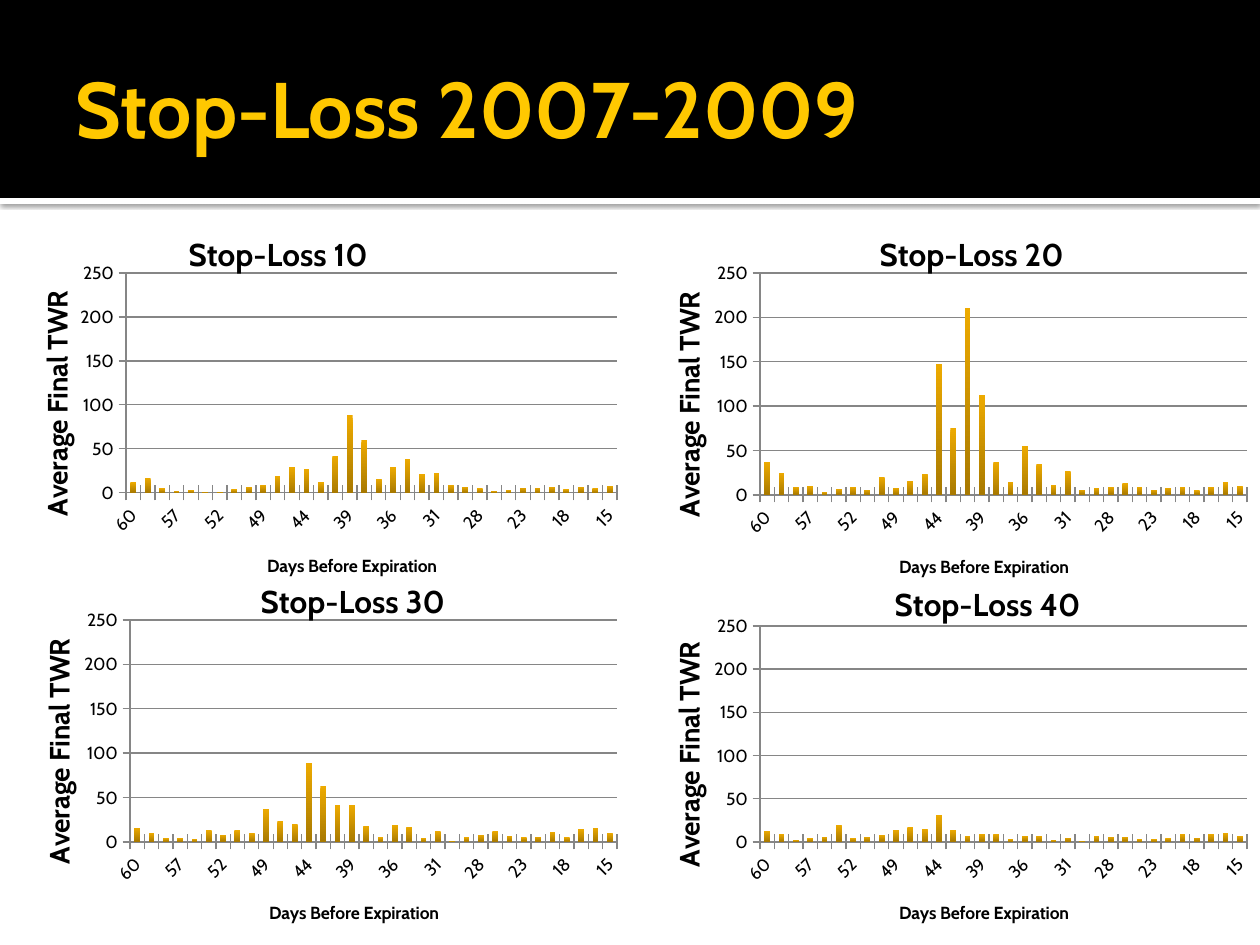
from dataclasses import dataclass

from pptx import Presentation
from pptx.chart.data import CategoryChartData
from pptx.dml.color import RGBColor
from pptx.enum.chart import XL_CHART_TYPE, XL_TICK_MARK
from pptx.enum.shapes import MSO_SHAPE
from pptx.enum.text import MSO_ANCHOR
from pptx.oxml import parse_xml
from pptx.oxml.ns import nsdecls, qn
from pptx.util import Emu, Pt

FONT = "Cabin"
BLACK, WHITE, YELLOW, GRAY = "000000", "FFFFFF", "FFC800", "868686"
BAR_TOP, BAR_BOTTOM = "EDAA00", "A87900"
CHART_W, CHART_H = 630, 410
DAYS = [60, 59, 58, 57, 56, 53, 52, 51, 50, 49, 46, 45, 44, 43, 42, 39, 38,
        37, 36, 35, 32, 31, 30, 29, 28, 25, 24, 23, 22, 21, 18, 17, 16, 15]


@dataclass
class Box:
    x: int
    y: int
    w: int
    h: int


@dataclass
class Panel:
    limit: int
    x: int
    y: int
    plot: Box
    title_at: tuple[int, int]
    y_title_at: tuple[int, int]
    x_title_at: tuple[int, int]
    values: list[int]


PANELS = [
    Panel(10, 0, 189, Box(126, 84, 491, 220), (183, 38), (33, 97), (264, 361),
          [12, 17, 5, 2, 3, 1, 1, 4, 7, 9, 19, 29, 27, 12, 42, 88, 60,
           16, 29, 38, 21, 22, 9, 7, 5, 2, 3, 6, 6, 7, 4, 7, 5, 8]),
    Panel(20, 630, 189, Box(130, 84, 487, 222), (244, 38), (35, 98), (266, 362),
          [37, 25, 9, 10, 3, 7, 9, 6, 20, 8, 16, 24, 147, 75, 211, 113, 37,
           15, 55, 35, 11, 27, 6, 8, 9, 13, 9, 6, 8, 9, 5, 9, 14, 10]),
    Panel(30, 0, 536, Box(130, 84, 487, 222), (255, 38), (35, 98), (266, 361),
          [16, 10, 4, 4, 3, 13, 8, 13, 10, 37, 23, 20, 89, 63, 41, 42, 18,
           5, 19, 17, 4, 12, 1, 5, 8, 12, 7, 5, 6, 11, 5, 14, 16, 10]),
    Panel(40, 630, 536, Box(130, 90, 487, 216), (259, 41), (35, 101), (266, 361),
          [13, 9, 2, 4, 6, 20, 4, 6, 8, 14, 17, 15, 31, 14, 7, 9, 9,
           3, 7, 7, 2, 5, 1, 7, 6, 6, 3, 3, 4, 9, 5, 9, 10, 7]),
]


def px(n: int) -> Emu:
    return Emu(round(n * 914400 / 126))


def rgb(color: str) -> RGBColor:
    return RGBColor.from_string(color)


def add_rect(slide, box: Box, color: str):
    s = slide.shapes.add_shape(MSO_SHAPE.RECTANGLE, px(box.x), px(box.y), px(box.w), px(box.h))
    s.shadow.inherit = False
    s.fill.solid()
    s.fill.fore_color.rgb = rgb(color)
    s.line.fill.background()
    return s


def add_shadow(s) -> None:
    effects = s._element.spPr.find(qn("a:effectLst"))
    effects.append(parse_xml(
        f'<a:outerShdw {nsdecls("a")} blurRad="{Pt(2.5)}" dist="{Pt(0.8)}" dir="5400000" '
        'algn="tl" rotWithShape="0"><a:srgbClr val="000000"><a:alpha val="60000"/>'
        '</a:srgbClr></a:outerShdw>'))


def set_font(font, size: int, bold: bool, color: str = BLACK) -> None:
    font.name, font.size, font.bold = FONT, Pt(size), bold
    font.color.rgb = rgb(color)


def add_title(slide, text: str) -> None:
    tf = slide.shapes.add_textbox(px(63), px(21), px(1134), px(173)).text_frame
    tf.word_wrap = True
    tf.vertical_anchor = MSO_ANCHOR.MIDDLE
    tf.margin_left, tf.margin_right = px(13), px(6)
    p = tf.paragraphs[0]
    p.text = text
    set_font(p.font, 45, True, YELLOW)


def manual_layout(x: int, y: int, size: tuple[int, int] | None = None):
    target = '<c:layoutTarget val="inner"/>' if size else ""
    extent = f'<c:w val="{size[0] / CHART_W}"/><c:h val="{size[1] / CHART_H}"/>' if size else ""
    return parse_xml(
        f'<c:layout {nsdecls("c")}><c:manualLayout>{target}<c:xMode val="edge"/>'
        f'<c:yMode val="edge"/><c:x val="{x / CHART_W}"/><c:y val="{y / CHART_H}"/>'
        f'{extent}</c:manualLayout></c:layout>')


def drop_layout(parent) -> None:
    for old in parent.findall(qn("c:layout")):
        parent.remove(old)


def set_chart_title(title, text: str, size: int, at: tuple[int, int], rot: int = 0) -> None:
    tf = title.text_frame
    p = tf.paragraphs[0]
    p.text = text
    set_font(p.font, size, True)
    body = tf._txBody.find(qn("a:bodyPr"))
    body.set("rot", str(rot * 60000))
    body.set("vert", "horz")
    drop_layout(title._element)
    title._element.find(qn("c:tx")).addnext(manual_layout(*at))


def style_axis(axis) -> None:
    axis.major_tick_mark = XL_TICK_MARK.CROSS
    axis.minor_tick_mark = XL_TICK_MARK.NONE
    axis.format.line.color.rgb = rgb(GRAY)
    axis.format.line.width = Pt(0.75)
    set_font(axis.tick_labels.font, 10, False)


def add_panel(slide, panel: Panel) -> None:
    data = CategoryChartData()
    data.categories = [str(day) for day in DAYS]
    data.add_series("Series 1", panel.values)
    chart = slide.shapes.add_chart(
        XL_CHART_TYPE.COLUMN_CLUSTERED, px(panel.x), px(panel.y),
        px(CHART_W), px(CHART_H), data).chart
    chart.has_legend = False
    set_font(chart.font, 10, False)
    set_chart_title(chart.chart_title, f"Stop-Loss {panel.limit}", 18, panel.title_at)

    cat, val = chart.category_axis, chart.value_axis
    style_axis(cat)
    style_axis(val)
    set_chart_title(cat.axis_title, "Days Before Expiration", 10, panel.x_title_at)
    set_chart_title(val.axis_title, "Average Final TWR", 16, panel.y_title_at, -90)
    val.minimum_scale, val.maximum_scale, val.major_unit = 0, 250, 50
    val.major_gridlines.format.line.color.rgb = rgb(GRAY)
    val.major_gridlines.format.line.width = Pt(0.75)

    ax = cat._element
    ax.find(qn("c:txPr")).find(qn("a:bodyPr")).set("rot", "-2700000")
    for tag, step in (("tickLblSkip", 3), ("tickMarkSkip", 1)):
        ax.find(qn("c:noMultiLvlLbl")).addprevious(
            parse_xml(f'<c:{tag} {nsdecls("c")} val="{step}"/>'))

    plot = chart.plots[0]
    plot.vary_by_categories = False
    plot.gap_width = 150
    fill = plot.series[0].format.fill
    fill.gradient()
    fill.gradient_angle = 270
    for stop, color in zip(fill.gradient_stops, (BAR_TOP, BAR_BOTTOM)):
        stop.color.rgb = rgb(color)

    area = chart._chartSpace.chart.plotArea
    drop_layout(area)
    area.insert(0, manual_layout(panel.plot.x, panel.plot.y, (panel.plot.w, panel.plot.h)))


def main() -> None:
    prs = Presentation()
    prs.slide_width, prs.slide_height = px(1260), px(945)
    slide = prs.slides.add_slide(prs.slide_layouts[6])
    add_shadow(add_rect(slide, Box(0, 198, 1260, 6), WHITE))
    add_rect(slide, Box(0, 0, 1260, 198), BLACK)
    add_title(slide, "Stop-Loss 2007-2009")
    for panel in PANELS:
        add_panel(slide, panel)
    prs.save("out.pptx")


if __name__ == "__main__":
    main()
